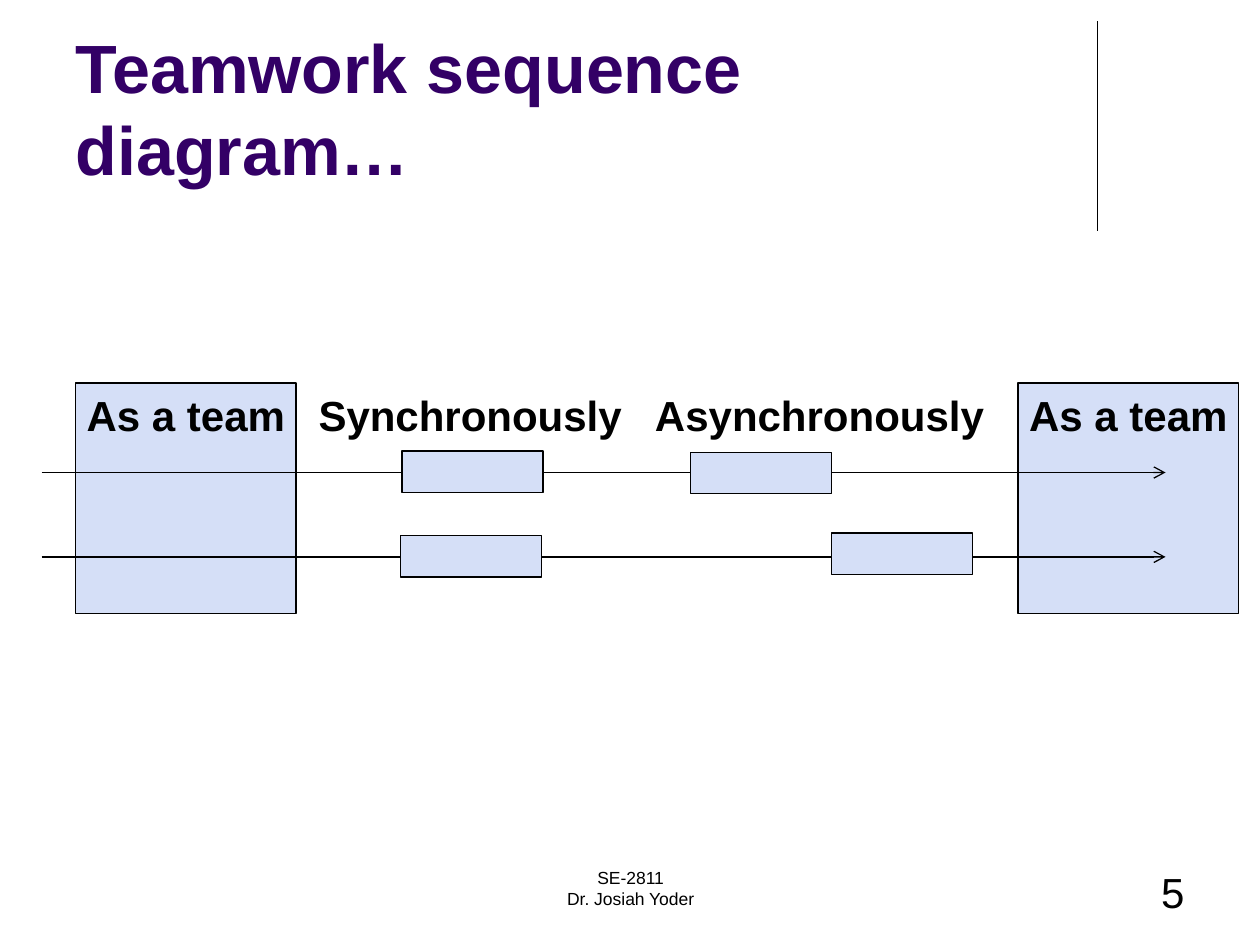
"""Build the teamwork sequence diagram slide."""
from lxml import etree
from pptx import Presentation
from pptx.dml.color import RGBColor
from pptx.enum.shapes import MSO_CONNECTOR, MSO_SHAPE
from pptx.enum.text import MSO_ANCHOR, MSO_AUTO_SIZE, PP_ALIGN
from pptx.oxml.ns import qn
from pptx.util import Inches, Pt

RECTANGLE = MSO_SHAPE.RECTANGLE
STRAIGHT = MSO_CONNECTOR.STRAIGHT
TOP, BOTTOM = MSO_ANCHOR.TOP, MSO_ANCHOR.BOTTOM
LEFT, CENTER, RIGHT = PP_ALIGN.LEFT, PP_ALIGN.CENTER, PP_ALIGN.RIGHT
BLACK = RGBColor(0x00, 0x00, 0x00)
PURPLE = RGBColor(0x33, 0x00, 0x66)
PALE_BLUE = RGBColor(0xD5, 0xDF, 0xF7)

TITLE = "Teamwork sequence diagram…"
FOOTER = "SE-2811\nDr. Josiah Yoder"
PAGE_NUMBER = "5"
TEAM_LABEL = "As a team"
TEAM_LEFTS = [0.6, 8.08]
TEAM_TOP, TEAM_SIZE = 3.04, (1.75, 1.83)
MODES = [("Synchronously", 2.43, 2.63), ("Asynchronously", 5.1, 2.84)]
LIFELINES = [3.75, 4.42]
LIFELINE_START, LIFELINE_END = 0.33, 9.25
TASKS = [(3.19, 3.58), (3.18, 4.25), (5.48, 3.59), (6.6, 4.23)]
TASK_SIZE = (1.12, 0.33)


def write(shape, text, size, align=LEFT, color=BLACK, bold=False, wrap=True, anchor=TOP):
    frame = shape.text_frame
    frame.text = text
    frame.word_wrap = wrap
    frame.vertical_anchor = anchor
    for para in frame.paragraphs:
        para.alignment = align
        for span in para.runs:
            span.font.name = "Arial"
            span.font.size = Pt(size)
            span.font.bold = bold
            span.font.color.rgb = color


def add_text(page, place, text, size, **style):
    box = page.shapes.add_textbox(*map(Inches, place))
    write(box, text, size, **style)
    return box


def add_box(page, left, top, size):
    box = page.shapes.add_shape(RECTANGLE, *map(Inches, (left, top, *size)))
    box.shadow.inherit = False
    box.fill.solid()
    box.fill.fore_color.rgb = PALE_BLUE
    box.line.color.rgb = BLACK
    box.line.width = Pt(0.75)
    return box


def add_line(page, start, end, arrow=False):
    line = page.shapes.add_connector(STRAIGHT, *map(Inches, (*start, *end)))
    line.line.color.rgb = BLACK
    line.line.width = Pt(0.75)
    properties = line._element.spPr
    if arrow:
        etree.SubElement(properties.find(qn("a:ln")), qn("a:tailEnd"), type="arrow")
    etree.SubElement(properties, qn("a:effectLst"))


def main():
    deck = Presentation()
    deck.slide_width, deck.slide_height = Inches(10), Inches(7.5)
    page = deck.slides.add_slide(deck.slide_layouts[5])

    title = page.shapes.title
    title.left, title.top, title.width, title.height = map(Inches, (0.5, 0.13, 8.25, 1.42))
    write(title, TITLE, 39, color=PURPLE, bold=True, anchor=BOTTOM)
    title.text_frame.auto_size = MSO_AUTO_SIZE.NONE
    title.text_frame.margin_right = Inches(0.2)

    add_line(page, (8.71, 0.17), (8.71, 1.83))
    add_text(page, (3.42, 6.83, 3.17, 0.5), FOOTER, 10, align=CENTER)
    add_text(page, (7.17, 6.83, 2.33, 0.5), PAGE_NUMBER, 24, align=RIGHT)

    for left in TEAM_LEFTS:
        team = add_box(page, left, TEAM_TOP, TEAM_SIZE)
        write(team, TEAM_LABEL, 24, align=CENTER, bold=True, wrap=False)
    for height in LIFELINES:
        add_line(page, (LIFELINE_START, height), (LIFELINE_END, height), arrow=True)
    for left, top in TASKS:
        add_box(page, left, top, TASK_SIZE)
    for label, left, width in MODES:
        mode = add_text(page, (left, TEAM_TOP, width, 0.5), label, 24, bold=True, wrap=False)
        mode.text_frame.auto_size = MSO_AUTO_SIZE.SHAPE_TO_FIT_TEXT

    deck.save("out.pptx")


if __name__ == "__main__":
    main()
